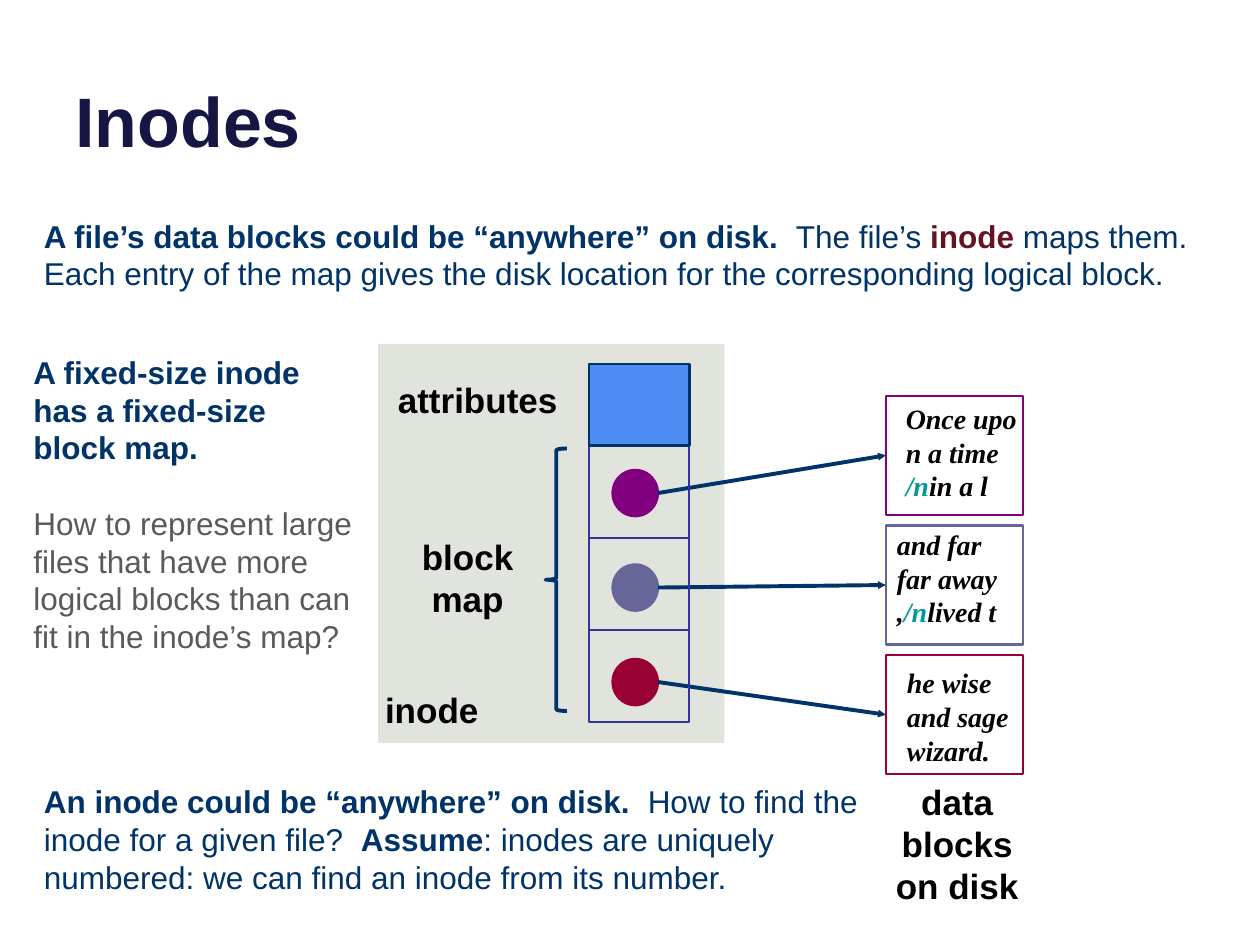
from dataclasses import dataclass

from lxml import etree
from pptx import Presentation
from pptx.dml.color import RGBColor
from pptx.enum import shapes, text
from pptx.oxml.ns import qn
from pptx.util import Pt

KIND = shapes.MSO_SHAPE


@dataclass(frozen=True)
class Theme:
    sans: str = "Arial"
    serif: str = "Times New Roman"
    title: int = 40
    label: int = 20
    body: int = 18
    data: int = 16
    head: str = "161645"
    navy: str = "003367"
    wine: str = "651222"
    grey: str = "5A5A5A"
    black: str = "000000"
    white: str = "FFFFFF"
    teal: str = "009999"
    panel: str = "E0E4DC"
    blue: str = "4D8CF1"
    grid: str = "333399"


T = Theme()


@dataclass(frozen=True)
class Box:
    left: float
    top: float
    width: float
    height: float

    def lengths(self) -> list:
        return [Pt(v) for v in (self.left, self.top, self.width, self.height)]


@dataclass(frozen=True)
class Run:
    text: str
    bold: bool | None = None
    color: str | None = None


@dataclass(frozen=True)
class Style:
    size: int
    color: str
    face: str = T.sans
    bold: bool = False
    italic: bool = False
    center: bool = False
    gap: float = 0


@dataclass(frozen=True)
class Block:
    color: str
    words: Box
    lines: list


BODY = Style(T.body, T.navy, gap=21.5)
LABEL = Style(T.label, T.black, bold=True, center=True)
DATA = Style(T.data, T.black, T.serif, bold=True, italic=True)


def rgb(code: str) -> RGBColor:
    return RGBColor.from_string(code)


def set_font(font, style: Style) -> None:
    font.name, font.size = style.face, Pt(style.size)
    font.bold, font.italic = style.bold, style.italic
    font.color.rgb = rgb(style.color)


def write(page, box: Box, lines: list, style: Style) -> None:
    """Add a text box; each line is a list of runs forming one paragraph."""
    frame = page.add_textbox(*box.lengths()).text_frame
    frame.word_wrap = True
    for i, line in enumerate(lines):
        para = frame.add_paragraph() if i else frame.paragraphs[0]
        if i and style.gap:
            para.space_before = Pt(style.gap)
        if style.center:
            para.alignment = text.PP_ALIGN.CENTER
        set_font(para.font, style)
        for part in line:
            run = para.add_run()
            run.text = part.text
            # Runs restate the style so that it holds in every viewer.
            set_font(run.font, style)
            if part.bold is not None:
                run.font.bold = part.bold
            if part.color:
                run.font.color.rgb = rgb(part.color)


def draw(page, kind, box: Box, fill: str | None = None,
         line: str | None = None, width: float = 1.25):
    item = page.add_shape(kind, *box.lengths())
    item.shadow.inherit = False
    if fill:
        item.fill.solid()
        item.fill.fore_color.rgb = rgb(fill)
    else:
        item.fill.background()
    if line:
        item.line.color.rgb = rgb(line)
        item.line.width = Pt(width)
    else:
        item.line.fill.background()
    return item


def link(page, x: float, y: float, x2: float, y2: float, color: str,
         width: float, arrow: bool = False) -> None:
    item = page.add_connector(shapes.MSO_CONNECTOR.STRAIGHT,
                              Pt(x), Pt(y), Pt(x2), Pt(y2))
    item.line.color.rgb = rgb(color)
    item.line.width = Pt(width)
    if arrow:
        etree.SubElement(item.line._get_or_add_ln(), qn("a:tailEnd"),
                         type="triangle", w="sm", len="sm")
    etree.SubElement(item._element.spPr, qn("a:effectLst"))


def draw_title(slide) -> None:
    title = slide.shapes.title
    title.left, title.top, title.width, title.height = Box(36, -26.5, 648, 122.5).lengths()
    frame = title.text_frame
    frame.text = "Inodes"
    frame.auto_size = text.MSO_AUTO_SIZE.NONE
    frame.vertical_anchor = text.MSO_ANCHOR.BOTTOM
    para = frame.paragraphs[0]
    para.alignment = text.PP_ALIGN.LEFT
    set_font(para.font, Style(T.title, T.head, bold=True))


def draw_map(page) -> None:
    """Draw the attribute cell above the three map cells."""
    left, top, width, cell = 336.5, 254.75, 57.5, 52.6
    group = page.add_group_shape().shapes
    draw(group, KIND.RECTANGLE, Box(left, top, width, 3 * cell), line=T.grid)
    for i in (1, 2):
        y = top + i * cell
        link(group, left, y, left + width, y, T.grid, 1.25)
    draw(group, KIND.RECTANGLE, Box(left, top - 46.75, width, 46.75),
         T.blue, T.navy, 1.5)


def draw_blocks(page) -> None:
    """Draw each map entry, its data block and the arrow between them."""
    blocks = [
        Block("800080", Box(510.5, 226, 84, 65.5),
              [[Run("Once upo")], [Run("n a time")],
               [Run("/n", color=T.teal), Run("in a l")]]),
        Block("666699", Box(505.5, 298, 94, 65),
              [[Run("and far")], [Run("far away")],
               [Run(","), Run("/n", color=T.teal), Run("lived t")]]),
        Block("990033", Box(511.2, 377, 94, 65),
              [[Run("he wise")], [Run("and sage")], [Run("wizard.")]]),
    ]
    for i, block in enumerate(blocks):
        dot = Box(350, 268.5 + 54 * i, 26, 26.5)
        disk = Box(506.2, 226.2 + 74.1 * i, 78.5, 68)
        draw(page, KIND.OVAL, dot, block.color, block.color)
        draw(page, KIND.RECTANGLE, disk, T.white, block.color)
        link(page, dot.left + dot.width, dot.top + dot.height / 2,
             disk.left, disk.top + disk.height / 2, T.navy, 2.25, True)
        write(page, block.words, block.lines, DATA)


def draw_texts(page) -> None:
    write(page, Box(18, 120.2, 684, 51), [[
        Run("A file’s data blocks could be “anywhere” on disk.  ", True),
        Run("The file’s "), Run("inode ", True, T.wine),
        Run("maps them.  Each entry of the map gives the disk location "
            "for the corresponding logical block.")]], BODY)
    write(page, Box(12, 198, 198, 181.5), [
        [Run("A fixed-size inode has a fixed-size block map.", True)],
        [Run("How to represent large files that have more logical blocks "
             "than can fit in the inode’s map?", color=T.grey)]], BODY)
    write(page, Box(18, 443.5, 486, 72.5), [[
        Run("An inode could be “anywhere” on disk.  ", True),
        Run("How to find the inode for a given file?  "), Run("Assume", True),
        Run(": inodes are uniquely numbered: we can find an inode "
            "from its number.")]], BODY)
    labels = {
        "attributes": Box(216, 212.5, 114, 85),
        "block map": Box(228.5, 302.5, 77.5, 55.5),
        "inode": Box(198, 390, 97.5, 31.5),
        "data blocks on disk": Box(498.5, 442.3, 97, 80),
    }
    for words, box in labels.items():
        write(page, box, [[Run(words)]], LABEL)


def main() -> None:
    deck = Presentation()
    deck.slide_width, deck.slide_height = Pt(720), Pt(540)
    slide = deck.slides.add_slide(deck.slide_layouts[5])
    page = slide.shapes
    draw(page, KIND.RECTANGLE, Box(216, 196.5, 198, 228), T.panel)
    draw_title(slide)
    draw_blocks(page)
    draw_map(page)
    brace = draw(page, KIND.LEFT_BRACE, Box(311.8, 256.3, 12.2, 150),
                 line=T.navy, width=2.25)
    brace.adjustments[0] = 0.08
    draw_texts(page)
    deck.save("out.pptx")


if __name__ == "__main__":
    main()
